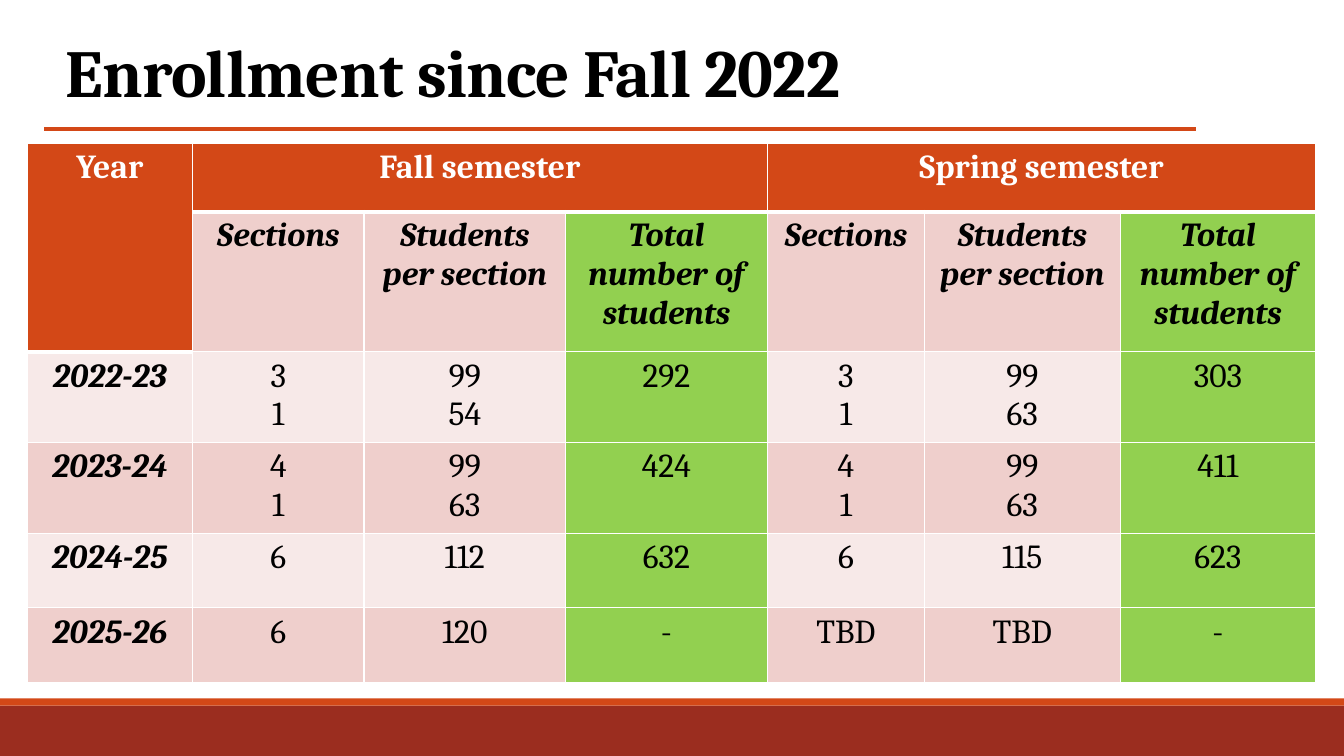
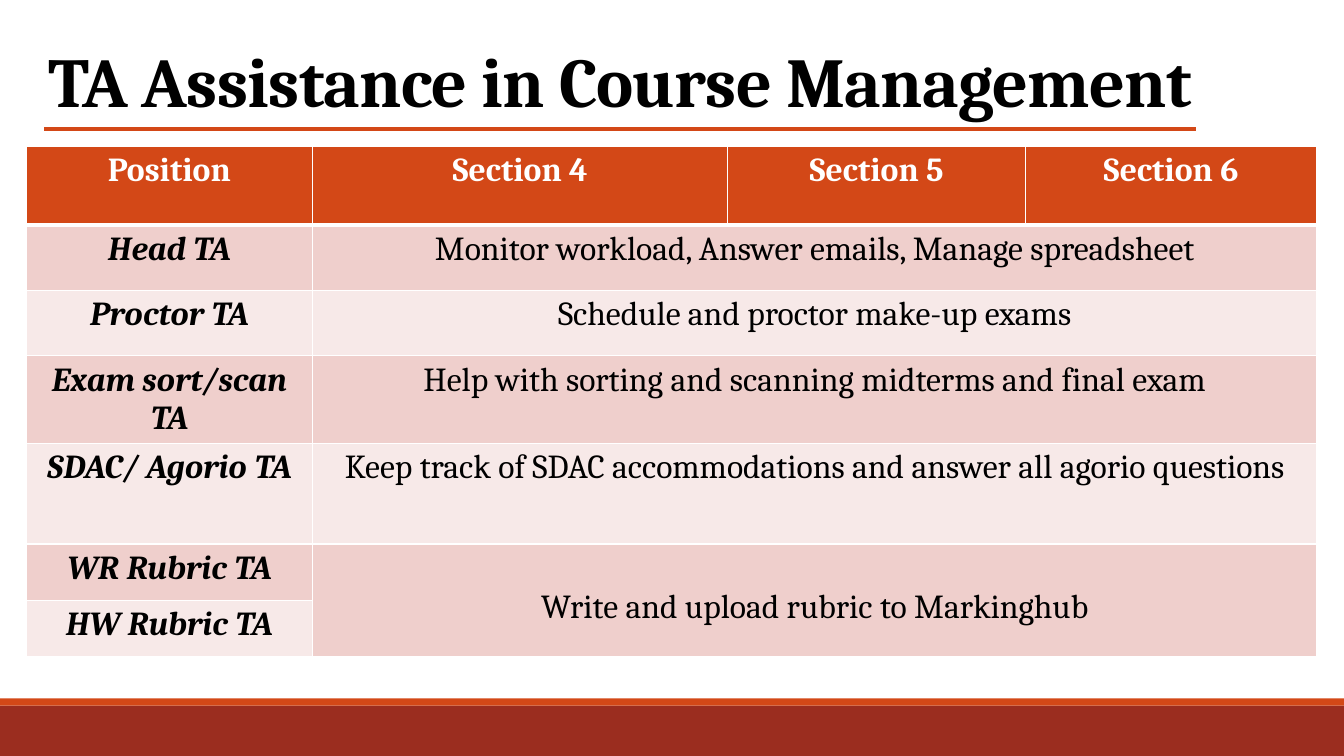
from dataclasses import dataclass

from lxml.etree import SubElement
from pptx import Presentation
from pptx.dml.color import RGBColor
from pptx.enum.shapes import MSO_CONNECTOR as Connector, MSO_SHAPE as Preset
from pptx.enum.text import MSO_ANCHOR as Anchor, MSO_AUTO_SIZE as AutoSize, PP_ALIGN as Align
from pptx.oxml.ns import qn
from pptx.util import Inches, Pt

# Shared look
FONT = "Cambria"
WHITE, BLACK = "FFFFFF", "000000"
ORANGE, BRICK, GREEN = "D34817", "9B2D1F", "92D050"
STRIPES = ("F7E9E8", "EFCFCC")  # even rows, odd rows
TITLE_ONLY = 5
THIN, HEAVY = 1, 3


@dataclass(frozen=True)
class Band:
    top: float
    height: float
    color: str


@dataclass(frozen=True)
class Title:
    text: str
    box: tuple[float, float, float, float]
    size: float
    align: Align


@dataclass(frozen=True)
class Span:
    row: int
    column: int
    last_row: int
    last_column: int


@dataclass(frozen=True)
class Grid:
    left: float
    top: float
    widths: list[float]
    heights: list[float]
    rows: list[list[str]]
    spans: list[Span]
    label_rows: tuple[int, ...] = ()
    total_columns: tuple[int, ...] = ()
    lowered: tuple[tuple[int, int], ...] = ()  # cells whose text starts one line down


BANDS = (Band(7, 0.5, BRICK), Band(6.93, 0.07, ORANGE))


def rgb(color: str) -> RGBColor:
    return RGBColor.from_string(color)


def add_text(paragraph, text: str, size: float, color: str, bold: bool, italic: bool = False):
    run = paragraph.add_run()
    run.text = text
    font = run.font
    font.name, font.size = FONT, Pt(size)
    font.bold, font.italic = bold, italic
    font.color.rgb = rgb(color)
    return run


def add_frame(slide, presentation) -> None:
    """Footer bands and the rule under the title."""
    for band in BANDS:
        shape = slide.shapes.add_shape(
            Preset.RECTANGLE, 0, Inches(band.top), presentation.slide_width, Inches(band.height))
        shape.shadow.inherit = False
        shape.fill.solid()
        shape.fill.fore_color.rgb = rgb(band.color)
        shape.line.fill.background()
    rule = slide.shapes.add_connector(
        Connector.STRAIGHT, Inches(0.44), Inches(1.28), Inches(11.86), Inches(1.28))
    rule.line.color.rgb = rgb(ORANGE)
    rule.line.width = Pt(2.25)
    SubElement(rule.element.spPr, qn("a:effectLst"))


def set_title(slide, title: Title) -> None:
    shape = slide.shapes.title
    shape.left, shape.top, shape.width, shape.height = map(Inches, title.box)
    frame = shape.text_frame
    frame.word_wrap = True
    frame.auto_size = AutoSize.NONE
    frame.vertical_anchor = Anchor.MIDDLE
    paragraph = frame.paragraphs[0]
    paragraph.alignment = title.align
    paragraph.line_spacing = 0.9
    run = add_text(paragraph, title.text, title.size, BLACK, True)
    run.font._element.set("spc", "-50")


def set_borders(cell, top: float, bottom: float) -> None:
    properties = cell._tc.get_or_add_tcPr()
    for side, width in (("L", THIN), ("R", THIN), ("T", top), ("B", bottom)):
        line = SubElement(properties, qn(f"a:ln{side}"), w=str(Pt(width)))
        fill = SubElement(line, qn("a:solidFill"))
        SubElement(fill, qn("a:srgbClr"), val=WHITE)


def add_grid(slide, grid: Grid) -> None:
    table = slide.shapes.add_table(
        len(grid.heights), len(grid.widths), Inches(grid.left), Inches(grid.top),
        Inches(sum(grid.widths)), Inches(sum(grid.heights))).table
    for column, width in zip(table.columns, grid.widths):
        column.width = Inches(width)
    for row, height in zip(table.rows, grid.heights):
        row.height = Inches(height)

    # The first row is the header, with any cell merged into it
    header = {(0, column) for column in range(len(grid.widths))}
    for span in grid.spans:
        table.cell(span.row, span.column).merge(table.cell(span.last_row, span.last_column))
        if span.row == 0:
            header |= {(row, span.column) for row in range(span.last_row + 1)}

    for row, texts in enumerate(grid.rows):
        for column, text in enumerate(texts):
            cell = table.cell(row, column)
            is_header = (row, column) in header
            is_label = not is_header and (column == 0 or row in grid.label_rows)
            set_borders(cell, HEAVY if (row - 1, column) in header else THIN,
                        HEAVY if is_header else THIN)
            if is_header:
                color = ORANGE
            else:
                color = GREEN if column in grid.total_columns else STRIPES[row % 2]
            cell.fill.solid()
            cell.fill.fore_color.rgb = rgb(color)
            if (row, column) in grid.lowered:
                cell.margin_top = Inches(0.44)
            if not text:
                continue
            frame = cell.text_frame
            for index, line in enumerate(text.split("\n")):
                paragraph = frame.add_paragraph() if index else frame.paragraphs[0]
                paragraph.alignment = Align.CENTER
                add_text(paragraph, line, 24, WHITE if is_header else BLACK,
                         is_header or is_label, is_label)


# Slide contents
SEMESTER_HEADS = ["Sections", "Students per section", "Total number of students"]
ENROLLMENT = Grid(
    0.27, 1.42,
    [1.64, 1.7, 2, 2, 1.56, 1.94, 1.94],
    [0.68, 1.39, 0.9, 0.9, 0.74, 0.74],
    [
        ["Year", "Fall semester", "", "", "Spring semester", "", ""],
        ["", *SEMESTER_HEADS, *SEMESTER_HEADS],
        ["2022-23", "3\n1", "99\n54", "292", "3\n1", "99\n63", "303"],
        ["2023-24", "4\n1", "99\n63", "424", "4\n1", "99\n63", "411"],
        ["2024-25", "6", "112", "632", "6", "115", "623"],
        ["2025-26", "6", "120", "-", "TBD", "TBD", "-"],
    ],
    [Span(0, 0, 1, 0), Span(0, 1, 0, 3), Span(0, 4, 0, 6)],
    label_rows=(1,),
    total_columns=(3, 6),
)
ASSISTANCE = Grid(
    0.26, 1.45,
    [2.84, 4.12, 2.95, 2.89],
    [0.78, 0.65, 0.65, 0.79, 1, 0.56, 0.56],
    [
        ["Position", "Section 4", "Section 5", "Section 6"],
        ["Head TA", "Monitor workload, Answer emails, Manage spreadsheet", "", ""],
        ["Proctor TA", "Schedule and proctor make-up exams", "", ""],
        ["Exam sort/scan TA", "Help with sorting and scanning midterms and final exam", "", ""],
        ["SDAC/ Agorio TA",
         "Keep track of SDAC accommodations and answer all agorio questions", "", ""],
        ["WR Rubric TA", "Write and upload rubric to Markinghub", "", ""],
        ["HW Rubric TA", "", "", ""],
    ],
    [*(Span(row, 1, row, 3) for row in range(1, 5)), Span(5, 1, 6, 3)],
    lowered=((5, 1),),
)
SLIDES = (
    (Title("Enrollment since Fall 2022", (0.55, 0.31, 11.5, 0.89), 48, Align.LEFT), ENROLLMENT),
    (Title("TA Assistance in Course Management", (0.06, 0.19, 12.19, 1.31), 50, Align.CENTER),
     ASSISTANCE),
)


def main() -> None:
    presentation = Presentation()
    presentation.slide_width, presentation.slide_height = Inches(13.33), Inches(7.5)
    for title, grid in SLIDES:
        slide = presentation.slides.add_slide(presentation.slide_layouts[TITLE_ONLY])
        add_frame(slide, presentation)
        set_title(slide, title)
        add_grid(slide, grid)
    presentation.save("out.pptx")


if __name__ == "__main__":
    main()
